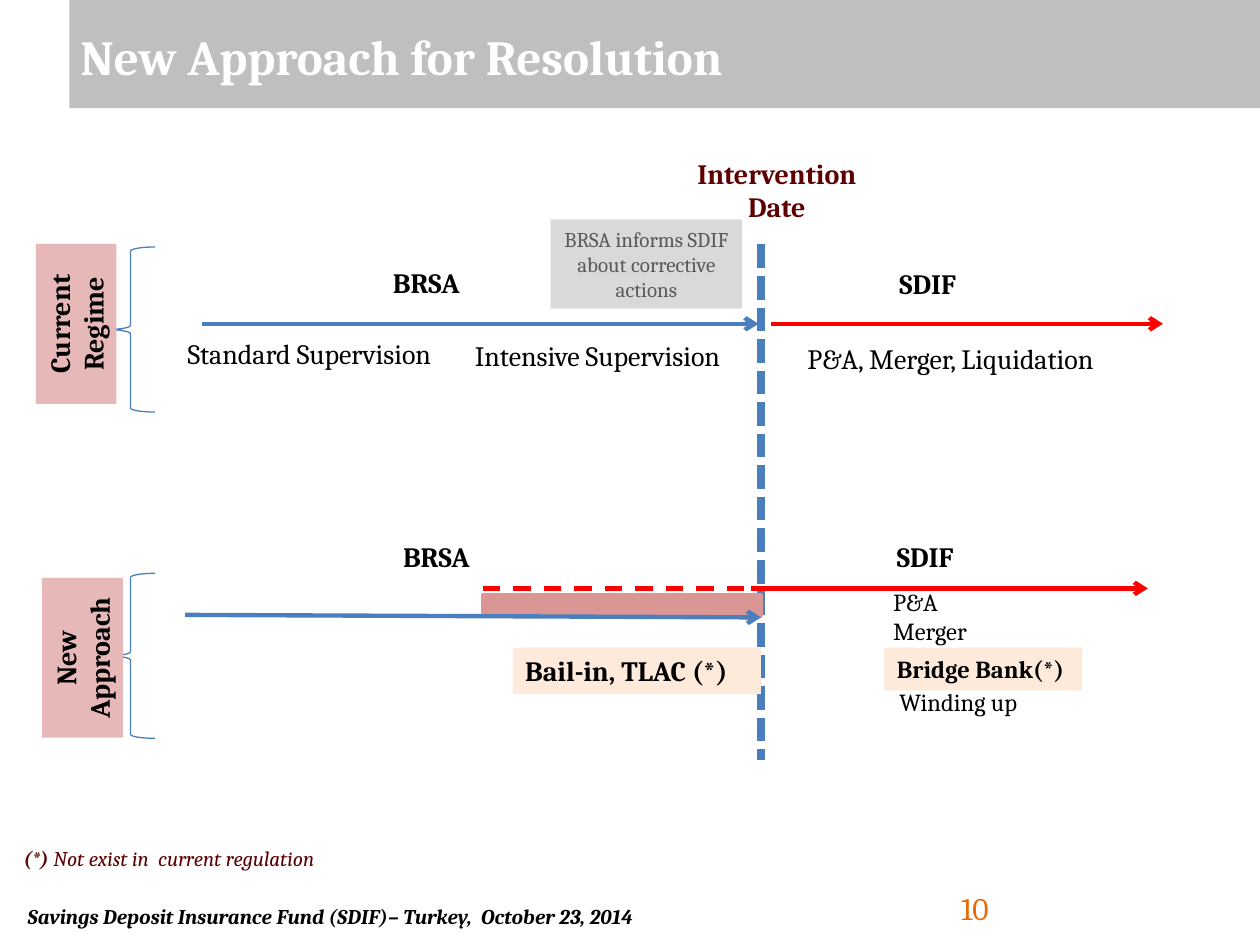
from lxml import etree
from pptx import Presentation
from pptx.dml.color import RGBColor
from pptx.enum.dml import MSO_LINE
from pptx.enum.shapes import MSO_CONNECTOR, MSO_SHAPE
from pptx.enum.text import MSO_ANCHOR, PP_ALIGN
from pptx.oxml.ns import qn
from pptx.util import Inches, Pt

LINE = MSO_CONNECTOR.STRAIGHT
RECT, BRACE = MSO_SHAPE.RECTANGLE, MSO_SHAPE.RIGHT_BRACE
DASH, DOTS = MSO_LINE.DASH, MSO_LINE.SQUARE_DOT
TOP, MID = MSO_ANCHOR.TOP, MSO_ANCHOR.MIDDLE
LEFT, CENTER = PP_ALIGN.LEFT, PP_ALIGN.CENTER

BLACK = RGBColor(0x00, 0x00, 0x00)
WHITE = RGBColor(0xFF, 0xFF, 0xFF)
BAND = RGBColor(0xBF, 0xBF, 0xBF)
PALE = RGBColor(0xD9, 0xD9, 0xD9)
GRAY = RGBColor(0x59, 0x59, 0x59)
BLUE = RGBColor(0x4B, 0x7E, 0xBC)
RED = RGBColor(0xFF, 0x00, 0x00)
ROSE = RGBColor(0xD9, 0x96, 0x94)
PINK = RGBColor(0xE6, 0xB9, 0xB8)
CREAM = RGBColor(0xFD, 0xEA, 0xDA)
WINE = RGBColor(0x5C, 0x00, 0x00)
ORANGE = RGBColor(0xE4, 0x6C, 0x0A)


def inches(box):
    return [Inches(n) for n in box]


def write(shape, lines, color=BLACK, align=LEFT, anchor=TOP, **font):
    """Fill a shape with one paragraph per line; returns its last paragraph."""
    frame = shape.text_frame
    frame.word_wrap = True
    frame.vertical_anchor = anchor
    frame.text = "\n".join(lines)
    look = {"name": "Cambria", "size": Pt(16)} | font
    for para in frame.paragraphs:
        para.alignment = align
        para.font.color.rgb = color
        for key, value in look.items():
            setattr(para.font, key, value)
    return para


def label(slide, box, *lines, **style):
    return write(slide.shapes.add_textbox(*inches(box)), lines, **style)


def block(slide, box, fill, *lines, turn=0, edge=None, **style):
    shape = slide.shapes.add_shape(RECT, *inches(box))
    shape.shadow.inherit = False
    shape.rotation = turn
    shape.fill.solid()
    shape.fill.fore_color.rgb = fill
    if edge:
        shape.line.color.rgb = edge
        shape.line.width = Pt(2)
    else:
        shape.line.fill.background()
    if lines:
        return write(shape, lines, **style)


def brace(slide, box):
    shape = slide.shapes.add_shape(BRACE, *inches(box))
    shape.shadow.inherit = False
    shape.rotation = 180
    shape.fill.background()
    shape.line.color.rgb = BLUE
    shape.line.width = Pt(0.75)


def rule(slide, ends, color, width=2.5, dash=None, arrow=False):
    line = slide.shapes.add_connector(LINE, *inches(ends))
    line.line.color.rgb = color
    line.line.width = Pt(width)
    if dash:
        line.line.dash_style = dash
    if arrow:
        tail = etree.SubElement(line.line._get_or_add_ln(), qn("a:tailEnd"))
        tail.set("type", "arrow")
    etree.SubElement(line._element.spPr, qn("a:effectLst"))


def header(slide):
    block(slide, (0.55, 0, 9.45, 0.86), BAND)
    label(slide, (0.54, 0.05, 8.65, 0.79), "New Approach for Resolution",
          color=WHITE, anchor=MID, size=Pt(28), bold=True)


def footer(slide):
    label(slide, (7.53, 7.01, 2.17, 0.29), "10", color=ORANGE, size=Pt(18))
    label(slide, (0.12, 7.12, 5.91, 0.3),
          "Savings Deposit Insurance Fund (SDIF)– Turkey,  October 23, 2014",
          size=Pt(12), bold=True, italic=True)
    note = block(slide, (0.09, 6.66, 2.62, 0.3), WHITE, "(*)",
                 color=WINE, size=Pt(12), bold=True, italic=True)
    rest = note.add_run()
    rest.text = " Not exist in  current regulation"
    rest.font.bold = False


def stage(slide, name, tag, top, brsa, sdif):
    """Draw the tag, brace and authority names that head one timeline."""
    brace(slide, (0.84, top, 0.39, 1.31))
    block(slide, (*tag, 1.27, 0.64), PINK, name, turn=270, align=CENTER, bold=True)
    label(slide, (*brsa, 0.75, 0.37), "BRSA", bold=True)
    label(slide, (*sdif, 0.71, 0.37), "SDIF", bold=True)


def current(slide):
    stage(slide, "Current Regime", (-0.03, 2.25), 1.96, (3.02, 2.06), (7.04, 2.07))
    label(slide, (1.39, 2.62, 2.44, 0.37), "Standard Supervision")
    label(slide, (3.67, 2.64, 2.72, 0.37), "Intensive Supervision")
    label(slide, (6.31, 2.66, 2.72, 0.37), "P&A, Merger, Liquidation")
    rule(slide, (6.12, 2.57, 9.23, 2.57), RED, arrow=True)
    rule(slide, (1.6, 2.57, 6.02, 2.57), BLUE, arrow=True)
    block(slide, (4.37, 1.74, 1.52, 0.71), PALE,
          "BRSA informs SDIF about corrective actions",
          color=GRAY, align=CENTER, anchor=MID, size=Pt(12))


def planned(slide):
    block(slide, (3.83, 4.72, 2.21, 0.17), ROSE, edge=ROSE)
    block(slide, (4.07, 5.14, 1.97, 0.37), CREAM, "Bail-in, TLAC (*)", bold=True)
    rule(slide, (1.47, 4.88, 6.04, 4.9), BLUE, arrow=True)
    rule(slide, (5.96, 4.67, 9.11, 4.67), RED, arrow=True)
    rule(slide, (3.83, 4.67, 5.94, 4.67), RED, dash=DASH)
    stage(slide, "New Approach", (0.02, 4.9), 4.55, (3.1, 4.23), (7.02, 4.23))
    label(slide, (6.99, 4.61, 2.54, 0.57), "P&A", "Merger", size=Pt(14))
    block(slide, (7.02, 5.14, 1.57, 0.34), CREAM, "Bridge Bank(*)",
          size=Pt(14), bold=True)
    label(slide, (7.04, 5.4, 2.54, 0.34), "Winding up", size=Pt(14))


def main():
    deck = Presentation()
    deck.slide_width, deck.slide_height = Inches(10), Inches(7.5)
    slide = deck.slides.add_slide(deck.slide_layouts[6])
    header(slide)
    rule(slide, (6.04, 1.94, 6.04, 6.03), BLUE, 4.5, DOTS)
    label(slide, (5.34, 1.19, 1.65, 0.64), "Intervention Date",
          color=WINE, align=CENTER, bold=True)
    current(slide)
    planned(slide)
    footer(slide)
    deck.save("out.pptx")


if __name__ == "__main__":
    main()
